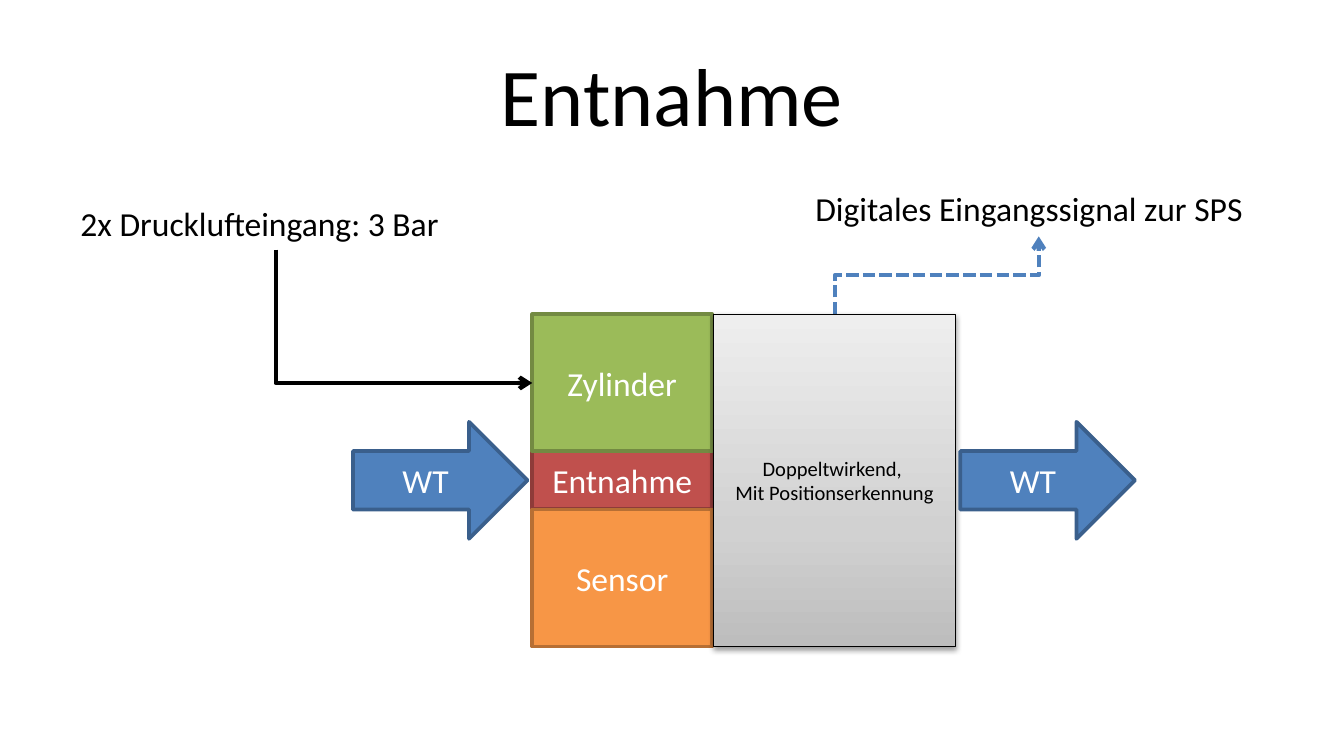
from dataclasses import dataclass

from lxml.etree import SubElement
from pptx import Presentation
from pptx.dml.color import RGBColor
from pptx.enum.dml import MSO_LINE_DASH_STYLE as Dash
from pptx.enum.shapes import MSO_CONNECTOR, MSO_SHAPE as Shape
from pptx.enum.text import MSO_ANCHOR as Anchor, PP_ALIGN as Align
from pptx.oxml.ns import qn
from pptx.util import Cm, Pt


@dataclass(frozen=True)
class Theme:
    font: str = "Calibri"
    title: int = 44
    body: int = 18
    small: int = 11
    black: str = "000000"
    white: str = "FFFFFF"
    blue: str = "4F81BD"
    blue_edge: str = "3A5F8C"
    green: str = "9BBB59"
    green_edge: str = "738A42"
    red: str = "C0504D"
    red_edge: str = "8E3B39"
    orange: str = "F79646"
    orange_edge: str = "B76F34"
    greys: tuple = ((0, "BDBDBD"), (35, "D1D1D1"), (100, "EEEEEE"))


T = Theme()


@dataclass(frozen=True)
class Box:
    """A rectangle in centimetres."""
    x: float
    y: float
    w: float
    h: float

    @property
    def cx(self):
        return self.x + self.w / 2

    @property
    def cy(self):
        return self.y + self.h / 2

    def emu(self):
        return Cm(self.x), Cm(self.y), Cm(self.w), Cm(self.h)


def rgb(color):
    return RGBColor.from_string(color)


def write(sp, text, size=T.body, color=T.black, align=Align.CENTER,
          anchor=Anchor.MIDDLE, wrap=True):
    """Fill a shape with text, one paragraph per line."""
    tf = sp.text_frame
    tf.word_wrap, tf.vertical_anchor = wrap, anchor
    for i, line in enumerate(text.split("\n")):
        p = tf.paragraphs[0] if i == 0 else tf.add_paragraph()
        p.alignment = align
        r = p.add_run()
        r.text = line
        r.font.name, r.font.size = T.font, Pt(size)
        r.font.color.rgb = rgb(color)


def add_text(shapes, box, text, **fmt):
    write(shapes.add_textbox(*box.emu()), text, **fmt)


def add_block(shapes, kind, box, text, fill, edge):
    sp = shapes.add_shape(kind, *box.emu())
    sp.shadow.inherit = False
    sp.fill.solid()
    sp.fill.fore_color.rgb = rgb(fill)
    sp.line.color.rgb = rgb(edge)
    sp.line.width = Pt(2)
    write(sp, text, color=T.white)


def add_elbow(shapes, start, end, preset, color, rot, flips, dash=None):
    """Arrow leaving start vertically; its frame is turned by a quarter."""
    (x1, y1), (x2, y2) = start, end
    w, h = abs(y2 - y1), abs(x2 - x1)
    x, y = (x1 + x2 - w) / 2, (y1 + y2 - h) / 2
    c = shapes.add_connector(MSO_CONNECTOR.ELBOW,
                             Cm(x), Cm(y), Cm(x + w), Cm(y + h))
    c.line.color.rgb = rgb(color)
    c.line.width = Pt(2.25)
    if dash:
        c.line.dash_style = dash
    sppr = c._element.spPr
    sppr.find(qn("a:prstGeom")).set("prst", preset)
    xfrm = sppr.find(qn("a:xfrm"))
    xfrm.set("rot", str(rot * 60000))
    for flip in flips:
        xfrm.set(flip, "1")
    SubElement(sppr.find(qn("a:ln")), qn("a:tailEnd"), type="arrow")
    SubElement(sppr, qn("a:effectLst"))


def add_stack(shapes, box):
    """Cylinder, removal and sensor, stacked as one group."""
    tall = 2.59
    parts = (("Entnahme", tall, box.h - 2 * tall, T.red, T.red_edge),
             ("Zylinder", 0, tall, T.green, T.green_edge),
             ("Sensor", box.h - tall, tall, T.orange, T.orange_edge))
    group = shapes.add_group_shape()
    for text, dy, h, fill, edge in parts:
        add_block(group.shapes, Shape.RECTANGLE,
                  Box(box.x, box.y + dy, box.w, h), text, fill, edge)


def add_detail(shapes, box, text):
    """Grey gradient panel with a soft shadow."""
    sp = shapes.add_shape(Shape.RECTANGLE, *box.emu())
    sp.shadow.inherit = False
    sp.fill.gradient()
    sp.fill.gradient_angle = 90
    sppr = sp._element.spPr
    stops = sppr.find(qn("a:gradFill")).find(qn("a:gsLst"))
    for gs in list(stops):
        stops.remove(gs)
    for pos, color in T.greys:
        gs = SubElement(stops, qn("a:gs"), pos=str(pos * 1000))
        SubElement(gs, qn("a:srgbClr"), val=color)
    sp.line.color.rgb = rgb(T.black)
    sp.line.width = Pt(0.75)
    shadow = SubElement(sppr.find(qn("a:effectLst")), qn("a:outerShdw"),
                        blurRad=str(Pt(3.1)), dist=str(Pt(1.6)),
                        dir="5400000", rotWithShape="0")
    tint = SubElement(shadow, qn("a:srgbClr"), val=T.black)
    SubElement(tint, qn("a:alpha"), val="38000")
    write(sp, text, size=T.small)


def add_station(shapes, box):
    """The station with its workpiece flow, air supply and signal."""
    stack = Box(box.x, box.y, 3.4, box.h)
    detail = Box(box.x + 3.43, box.y, box.w - 3.43, box.h)
    add_stack(shapes, stack)
    add_elbow(shapes, (detail.cx, box.y), (19.63, 4.47), "bentConnector3",
              T.blue, 90, ("flipH", "flipV"), Dash.SQUARE_DOT)
    add_detail(shapes, detail, "Doppeltwirkend, \nMit Positionserkennung")
    add_text(shapes, Box(15.16, 3.43, 8.97, 1.02),
             "Digitales Eingangssignal zur SPS",
             align=Align.LEFT, anchor=Anchor.TOP, wrap=False)
    add_elbow(shapes, (5.21, 4.72), (box.x, box.y + 1.3), "bentConnector2",
              T.black, 270, ("flipH",))
    add_text(shapes, Box(1.27, 3.71, 7.9, 1.02), "2x Drucklufteingang: 3 Bar",
             align=Align.LEFT, anchor=Anchor.TOP)
    w, h, gap = 3.3, 2.21, 0.09
    for x in (box.x - gap - w, box.x + box.w + gap):
        add_block(shapes, Shape.RIGHT_ARROW, Box(x, box.cy - h / 2, w, h),
                  "WT", T.blue, T.blue_edge)


def main():
    prs = Presentation()
    prs.slide_width, prs.slide_height = Cm(25.4), Cm(14.29)
    s = prs.slides.add_slide(prs.slide_layouts[6])
    add_text(s.shapes, Box(1.27, 0.58, 22.86, 2.39), "Entnahme", size=T.title)
    add_station(s.shapes, Box(10.06, 5.94, 8, 6.28))
    prs.save("out.pptx")


if __name__ == "__main__":
    main()
